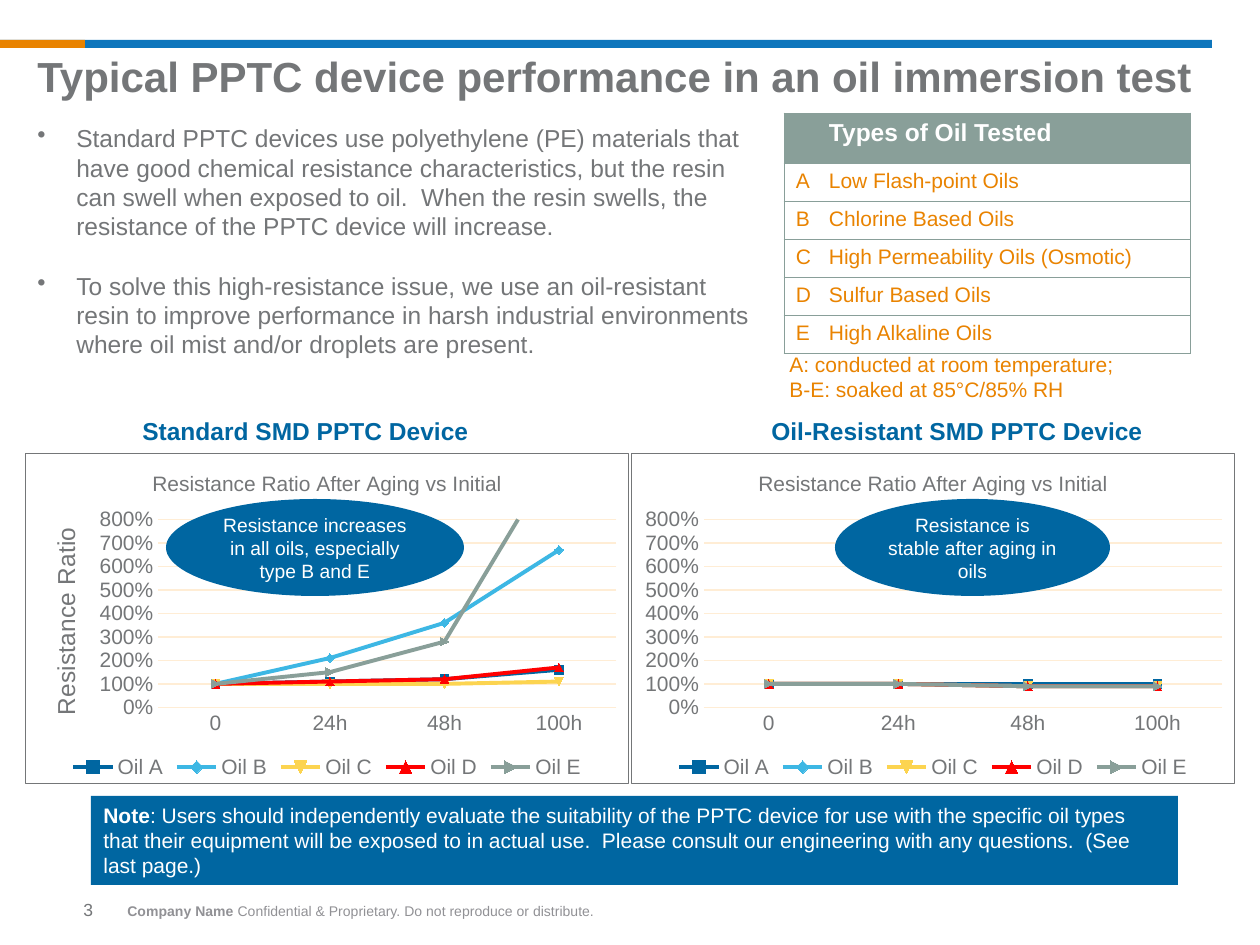
from dataclasses import dataclass

from lxml import etree
from pptx import Presentation
from pptx.chart.data import CategoryChartData
from pptx.dml.color import RGBColor
from pptx.enum.chart import XL_CHART_TYPE as CT, XL_LEGEND_POSITION as LP, XL_TICK_MARK as TM
from pptx.enum.shapes import MSO_SHAPE as SHAPE
from pptx.enum.text import MSO_ANCHOR as ANCHOR, PP_ALIGN as ALIGN
from pptx.oxml import parse_xml
from pptx.oxml.ns import nsdecls, qn
from pptx.util import Pt

PX = 914400 / 126


@dataclass(frozen=True)
class Theme:
    """Colours and type sizes of the slide."""
    font: str = "Arial"
    gray: str = "747678"
    footer: str = "919195"
    bar: str = "0E76BC"
    blue: str = "0066A1"
    orange: str = "E98300"
    sage: str = "899F99"
    grid: str = "FFEDD5"
    white: str = "FFFFFF"
    series: tuple = ("0066A1", "3DB7E4", "FCD450", "FF0000", "899F99")
    title: int = 24
    body: int = 14
    label: int = 12
    callout: int = 11
    page: int = 10
    small: int = 8


T = Theme()


def px(*lengths):
    """Turn px into EMU."""
    return [round(n * PX) for n in lengths]


def rgb(color):
    """Make a colour from its hex form."""
    return RGBColor.from_string(color)


def set_font(font, size, color, bold=False):
    """Give a font its face, size, colour and weight."""
    font.name, font.size, font.bold = T.font, Pt(size), bold
    font.color.rgb = rgb(color)


def write(tf, text, size=T.label, color=T.gray, bold=False, lead="", align=ALIGN.LEFT,
          anchor=ANCHOR.TOP, gap=0, spacing=None, bullet=None):
    """Fill a text frame with paragraphs, one per line, after an optional bold lead."""
    tf.word_wrap = True
    tf.vertical_anchor = anchor
    for i, line in enumerate(text.split("\n")):
        p = tf.add_paragraph() if i else tf.paragraphs[0]
        p.alignment = align
        if spacing:
            p.line_spacing = spacing
        if i and gap:
            p.space_before = Pt(gap)
        if bullet:
            indent = px(39)[0]
            pPr = p._p.get_or_add_pPr()
            pPr.set("marL", str(indent))
            pPr.set("indent", str(-indent))
            etree.SubElement(pPr, qn("a:buChar")).set("char", bullet)
        for part, strong in ((lead if i == 0 else "", True), (line, bold)):
            if part:
                r = p.add_run()
                r.text = part
                set_font(r.font, size, color, strong)


def add_text(slide, box, text, **fmt):
    """Place a text box."""
    write(slide.shapes.add_textbox(*px(*box)).text_frame, text, **fmt)


def add_block(slide, box, fill, kind=SHAPE.RECTANGLE, text="", **fmt):
    """Place a filled shape with optional text."""
    sp = slide.shapes.add_shape(kind, *px(*box))
    sp.shadow.inherit = False
    sp.fill.solid()
    sp.fill.fore_color.rgb = rgb(fill)
    sp.line.fill.background()
    if text:
        write(sp.text_frame, text, color=T.white, **fmt)


def add_header(slide, box):
    """Place the two-colour bar and the title."""
    x, y, w, h = box
    add_block(slide, (x, y, 1212, 8), T.bar)
    add_block(slide, (x, y, 85, 8), T.orange)
    add_text(slide, (x + 25, y + 10, w - 34, h - 10),
             "Typical PPTC device performance in an oil immersion test",
             size=T.title, bold=True, spacing=0.9)


def set_borders(cell, sides):
    """Draw the named sides of a cell and clear the others."""
    tcPr = cell._tc.get_or_add_tcPr()
    for side in "LRTB":
        fill = f'<a:solidFill><a:srgbClr val="{T.sage}"/></a:solidFill>' if side in sides else "<a:noFill/>"
        tcPr.append(parse_xml(f'<a:ln{side} {nsdecls("a")} w="6350">{fill}</a:ln{side}>'))


def add_oil_table(slide, box):
    """Place the table of oils and the test conditions below it."""
    x, y, w, h = box
    oils = ("Low Flash-point Oils", "Chlorine Based Oils", "High Permeability Oils (Osmotic)",
            "Sulfur Based Oils", "High Alkaline Oils")
    rows = [("", "Types of Oil Tested"), *zip("ABCDE", oils)]
    row_h = 38
    head_h = h - row_h * len(oils)
    table = slide.shapes.add_table(len(rows), 2, *px(*box)).table
    table.horz_banding = False
    for col, width in zip(table.columns, (33, w - 33)):
        col.width = px(width)[0]
    for i, row in enumerate(rows):
        head = i == 0
        table.rows[i].height = px(head_h if head else row_h)[0]
        for j, text in enumerate(row):
            cell = table.cell(i, j)
            cell.margin_left, cell.margin_right = px(12, 0)
            set_borders(cell, "RTB" if j else "LTB")
            cell.fill.solid()
            cell.fill.fore_color.rgb = rgb(T.sage if head else T.white)
            write(cell.text_frame, text, bold=head, size=T.body if head else T.label,
                  color=T.white if head else T.orange)
    add_text(slide, (x - 7, y + h - 8, 360, 63),
             "A: conducted at room temperature;\nB-E: soaked at 85°C/85% RH", color=T.orange)


def set_layout(chart, x, y, w, h):
    """Fix the inner plot area as fractions of the chart."""
    area = chart._chartSpace.chart.plotArea
    for old in area.findall(qn("c:layout")):
        area.remove(old)
    values = "".join(f'<c:{k} val="{v:.2f}"/>' for k, v in zip("xywh", (x, y, w, h)))
    area.insert(0, parse_xml(
        f'<c:layout {nsdecls("c")}><c:manualLayout><c:layoutTarget val="inner"/>'
        f'<c:xMode val="edge"/><c:yMode val="edge"/>{values}</c:manualLayout></c:layout>'))


def add_title(owner, text, size):
    """Title a chart or an axis."""
    tf = owner.text_frame
    tf.text = text
    set_font(tf.paragraphs[0].runs[0].font, size, T.gray)


def add_ratio_chart(slide, box, values, plot, axis_title=None):
    """Place a bordered line chart of resistance ratios."""
    data = CategoryChartData(number_format="0%")
    data.categories = ["0", "24h", "48h", "100h"]
    for letter, series in zip("ABCDE", values):
        data.add_series(f"Oil {letter}", series)
    chart = slide.shapes.add_chart(CT.LINE, *px(*box), data).chart
    set_font(chart.font, T.label, T.gray)
    chart.has_title = True
    add_title(chart.chart_title, "Resistance Ratio After Aging vs Initial", T.label)
    chart.has_legend = True
    chart.legend.position = LP.BOTTOM
    chart.legend.include_in_layout = False
    set_font(chart.legend.font, T.label, T.gray)
    cat, val = chart.category_axis, chart.value_axis
    for axis in (cat, val):
        axis.major_tick_mark = axis.minor_tick_mark = TM.NONE
        set_font(axis.tick_labels.font, T.label, T.gray)
    val.minimum_scale, val.maximum_scale, val.major_unit = 0, 8, 1
    val.tick_labels.number_format = "0%"
    val.tick_labels.number_format_is_linked = False
    val.format.line.fill.background()
    for line in (cat.format.line, val.major_gridlines.format.line):
        line.color.rgb, line.width = rgb(T.grid), Pt(0.75)
    if axis_title:
        add_title(val.axis_title, axis_title, T.body)
    chart.plots[0].vary_by_categories = False
    for series, color in zip(chart.plots[0].series, T.series):
        series.smooth = False
        series.marker.style = None
        series.format.line.color.rgb, series.format.line.width = rgb(color), Pt(2.25)
    set_layout(chart, *plot)
    chart._chartSpace.chart.addnext(parse_xml(
        f'<c:spPr {nsdecls("c", "a")}><a:noFill/><a:ln w="9525"><a:solidFill>'
        f'<a:srgbClr val="{T.gray}"/></a:solidFill></a:ln></c:spPr>'))


def add_device(slide, box, name, name_x, values, plot, callout, oval_x, oval_w, axis_title=None):
    """Place a device heading, its chart and the callout over it."""
    x, y, w, h = box
    add_text(slide, (x + name_x, y, 430, 43), name, size=T.body, color=T.blue, bold=True)
    add_ratio_chart(slide, (x, y + 43, w, h - 43), values, plot, axis_title)
    add_block(slide, (x + oval_x, y + 89, oval_w, 97), T.blue, SHAPE.OVAL, callout,
              size=T.callout, align=ALIGN.CENTER, anchor=ANCHOR.MIDDLE)


def add_footer(slide, box):
    """Place the note, the page number and the confidentiality line."""
    x, y, w, h = box
    add_block(slide, (x, y, w, 89), T.blue, lead="Note",
              text=": Users should independently evaluate the suitability of the PPTC device for use "
                   "with the specific oil types that their equipment will be exposed to in actual use.  "
                   "Please consult our engineering with any questions.  (See last page.)")
    add_text(slide, (x - 20, y + 89, 94, h - 89), "3", size=T.page, anchor=ANCHOR.MIDDLE)
    add_text(slide, (x + 24, y + 100, 520, 30), lead="Company Name", size=T.small, color=T.footer,
             text=" Confidential & Proprietary. Do not reproduce or distribute.")


def main():
    """Build the slide and save it."""
    prs = Presentation()
    prs.slide_width, prs.slide_height = px(1260, 945)
    s = prs.slides.add_slide(prs.slide_layouts[6])
    add_header(s, (0, 40, 1260, 81))
    add_text(s, (25, 117, 743, 251),
             "Standard PPTC devices use polyethylene (PE) materials that have good chemical resistance "
             "characteristics, but the resin can swell when exposed to oil.  When the resin swells, the "
             "resistance of the PPTC device will increase.\n"
             "To solve this high-resistance issue, we use an oil-resistant resin to improve performance "
             "in harsh industrial environments where oil mist and/or droplets are present.",
             size=T.body, gap=17, bullet="•")
    add_oil_table(s, (784, 113, 406, 240))
    standard = ((1, 1.1, 1.2, 1.6), (1, 2.1, 3.6, 6.7), (1, 1, 1, 1.1), (1, 1.1, 1.2, 1.7),
                (1, 1.5, 2.8, 10.9))
    resistant = ((1, 1, 1, 1), *[(1, 1, 0.9, 0.9)] * 4)
    add_device(s, (25, 410, 604, 374), "Standard SMD PPTC Device", 105, standard,
               (0.22, 0.2, 0.76, 0.57), "Resistance increases in all oils, especially type B and E",
               141, 298, "Resistance Ratio")
    add_device(s, (631, 410, 604, 374), "Oil-Resistant SMD PPTC Device", 128, resistant,
               (0.12, 0.2, 0.86, 0.57), "Resistance is stable after aging in oils", 204, 275)
    add_footer(s, (91, 796, 1087, 139))
    prs.save("out.pptx")


if __name__ == "__main__":
    main()
